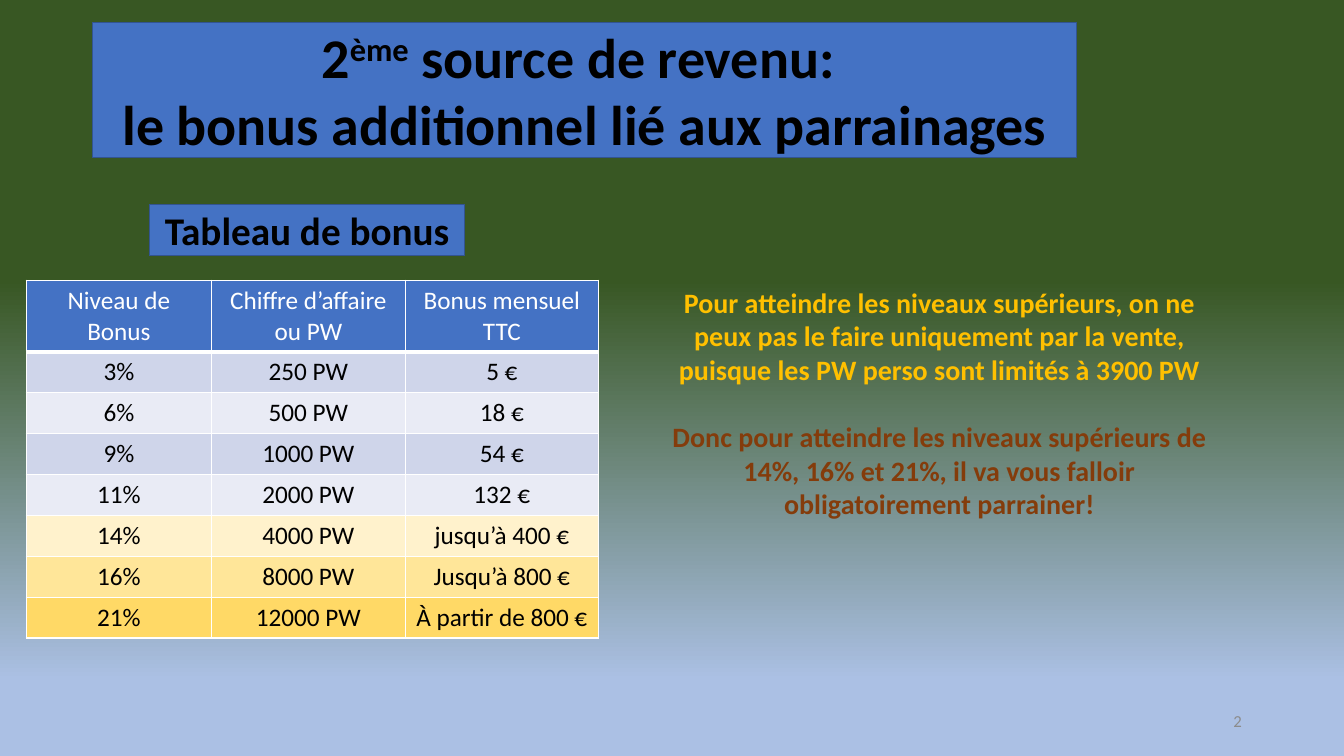
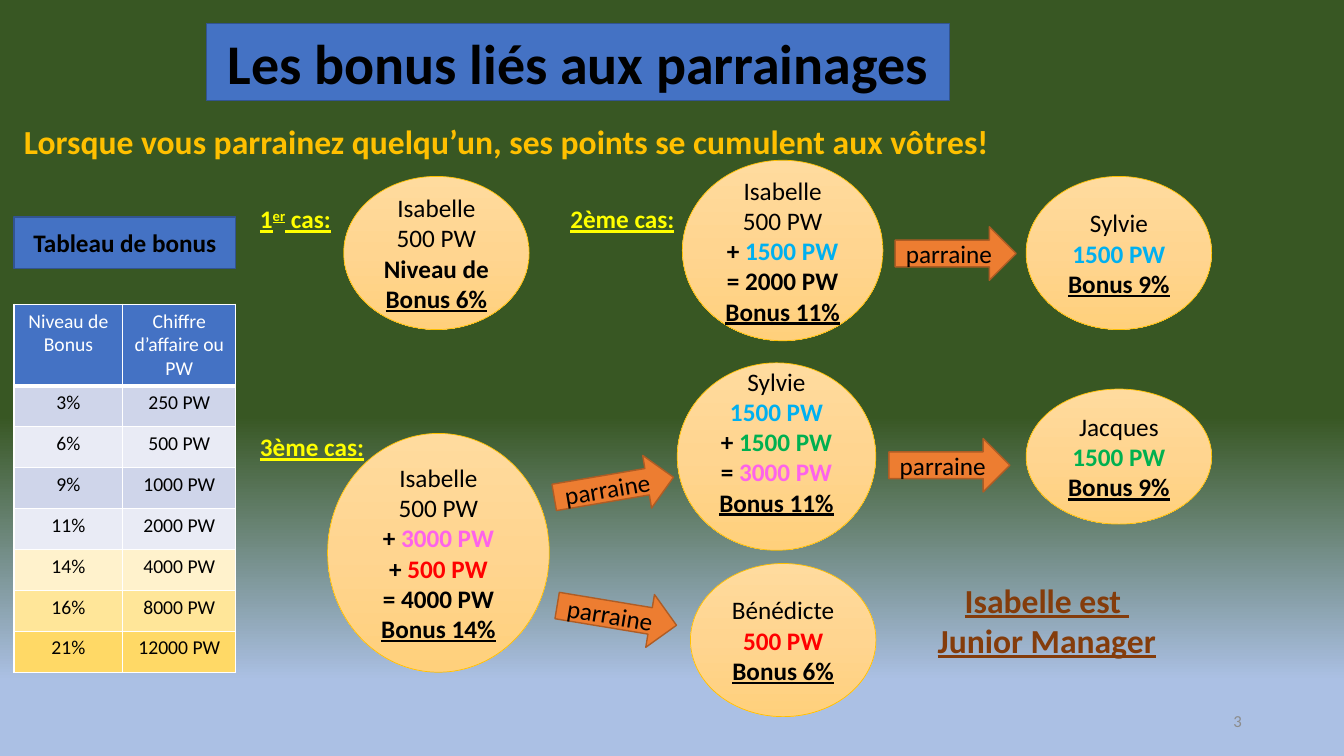
import pptx
import pptx.dml.color
import pptx.enum.shapes
import pptx.enum.text
import pptx.oxml.ns
import pptx.util
from lxml import etree

Pt = pptx.util.Pt
qn = pptx.oxml.ns.qn
ALIGN = pptx.enum.text.PP_ALIGN
MIDDLE = pptx.enum.text.MSO_ANCHOR.MIDDLE
FIT = pptx.enum.text.MSO_AUTO_SIZE
SHAPE = pptx.enum.shapes.MSO_SHAPE

FONT = "Calibri"
BLACK, WHITE, GREY = "000000", "FFFFFF", "8C8C8C"
BLUE, NAVY = "4472C4", "325491"
GOLD, BROWN, YELLOW = "FFC000", "843C0B", "FFFF00"
ORANGE, RUST = "ED7D31", "AF5C24"
CYAN, GREEN, PINK, RED = "00B0F0", "00B050", "FD63EB", "FF0000"
GLOW = [(0, "FFDB9E"), (50, "FFD590"), (100, "FFD07C")]
SKY = [(90, "ABC0E4"), (100, "ABC0E4"), (100, "C7D5ED")]
FOREST = "385723"

HEADS = ["Niveau de Bonus", "Chiffre d’affaire ou PW", "Bonus mensuel TTC"]
LEVELS = [
    ("CFD5EA", "3%", "250 PW", "5 €"),
    ("E9EBF5", "6%", "500 PW", "18 €"),
    ("CFD5EA", "9%", "1000 PW", "54 €"),
    ("E9EBF5", "11%", "2000 PW", "132 €"),
    ("FFF2CC", "14%", "4000 PW", "jusqu’à 400 €"),
    ("FFE699", "16%", "8000 PW", "Jusqu’à 800 €"),
    ("FFD966", "21%", "12000 PW", "À partir de 800 €"),
]


def rgb(code):
    return pptx.dml.color.RGBColor.from_string(code)


def paint(item, fill, line, width):
    if fill:
        item.fill.solid()
        item.fill.fore_color.rgb = rgb(fill)
    item.line.color.rgb = rgb(line)
    item.line.width = Pt(width)


def blend(fill, root, stops):
    fill.gradient()
    fill.gradient_angle = 270
    chain = root.find(".//" + qn("a:gsLst"))
    for old in list(chain):
        chain.remove(old)
    for pos, code in stops:
        stop = etree.SubElement(chain, qn("a:gs"), pos=str(pos * 1000))
        etree.SubElement(stop, qn("a:srgbClr"), val=code)


def style(font, color, marks):
    font.color.rgb = rgb(color)
    font.bold = "b" in marks
    font.underline = "u" in marks
    if "^" in marks:
        font._element.set("baseline", "30000")


def write(frame, size, lines, align=ALIGN.CENTER, gap=0):
    for row, parts in enumerate(lines):
        para = frame.paragraphs[0] if row == 0 else frame.add_paragraph()
        para.alignment = align
        para.font.name = FONT
        para.font.size = Pt(size)
        para.space_before = Pt(gap if row else 0)
        for text, color, marks in parts:
            run = para.add_run()
            run.text = text
            style(para.font if len(parts) == 1 else run.font, color, marks)


def shape(slide, kind, box):
    item = slide.shapes.add_shape(kind, *map(Pt, box))
    item.shadow.inherit = False
    item.text_frame.word_wrap = True
    item.text_frame.vertical_anchor = MIDDLE
    return item


def label(slide, box, size, lines, align=ALIGN.LEFT, wrap=False, gap=0):
    frame = slide.shapes.add_textbox(*map(Pt, box)).text_frame
    frame.word_wrap = wrap
    frame.auto_size = FIT.SHAPE_TO_FIT_TEXT
    write(frame, size, lines, align, gap)
    return frame


def page(deck, number, start, box, lines):
    slide = deck.slides.add_slide(deck.slide_layouts[5])
    blend(slide.background.fill, slide.element, [(start, FOREST)] + SKY)
    title = slide.shapes.title
    title.left, title.top, title.width, title.height = map(Pt, box)
    paint(title, BLUE, NAVY, 1)
    frame = title.text_frame
    frame.word_wrap = True
    frame.auto_size = FIT.NONE
    frame.vertical_anchor = MIDDLE
    write(frame, 40, lines)
    foot = label(slide, (678.2, 500.4, 216, 28.8), 12,
                 [[(str(number), GREY, "")]], ALIGN.RIGHT, True)
    foot.auto_size = FIT.NONE
    foot.vertical_anchor = MIDDLE
    return slide


def badge(slide, box, size):
    item = shape(slide, SHAPE.RECTANGLE, box)
    paint(item, BLUE, NAVY, 1)
    write(item.text_frame, size, [[("Tableau de bonus", BLACK, "b")]])


def edge(cell, base):
    props = cell._tc.get_or_add_tcPr()
    for side, width in (("L", 1), ("R", 1), ("T", 1), ("B", base)):
        line = etree.SubElement(props, qn("a:ln" + side), w=str(Pt(width)))
        fill = etree.SubElement(line, qn("a:solidFill"))
        etree.SubElement(fill, qn("a:srgbClr"), val=WHITE)


def grid(slide, left, top, widths, head, size):
    rows = [(BLUE, *HEADS)] + LEVELS
    high = 29.2
    frame = slide.shapes.add_table(
        len(rows), len(widths), Pt(left), Pt(top),
        Pt(sum(widths)), Pt(head + high * len(LEVELS)))
    table = frame.table
    table.first_row = table.horz_banding = False
    for col, width in enumerate(widths):
        table.columns[col].width = Pt(width)
    for row, (tint, *texts) in enumerate(rows):
        table.rows[row].height = Pt(high if row else head)
        for col in range(len(widths)):
            cell = table.cell(row, col)
            edge(cell, 1 if row else 3)
            cell.fill.solid()
            cell.fill.fore_color.rgb = rgb(tint)
            ink = BLACK if row else WHITE
            write(cell.text_frame, size, [[(texts[col], ink, "")]])


def bubble(slide, box, name, *lines):
    item = shape(slide, SHAPE.OVAL, box)
    blend(item.fill, item.element, GLOW)
    paint(item, None, GOLD, 0.5)
    write(item.text_frame, 18, [[(name, BLACK, "")], *lines])
    return item


def arrow(slide, left, top, turn=0):
    item = shape(slide, SHAPE.RIGHT_ARROW, (left, top, 86.4, 38.2))
    paint(item, ORANGE, RUST, 1)
    item.rotation = turn
    frame = item.text_frame
    frame.margin_left = frame.margin_right = Pt(4)
    write(frame, 18, [[("parraine", BLACK, "")]])


def plain(text):
    return [(text, BLACK, "")]


def bold(text, color=BLACK):
    return [(text, color, "b")]


def plus(text, color, sign="+ "):
    return bold(sign) + bold(text, color)


def bonus(rate):
    return [("Bonus " + rate, BLACK, "bu")]


def levels(deck):
    slide = page(deck, 2, 37, (66, 16, 703, 96.5), [
        [("2", BLACK, "b"), ("ème", BLACK, "b^"),
         (" source de revenu: ", BLACK, "b")],
        bold("le bonus additionnel lié aux parrainages")])
    grid(slide, 18.7, 200.2, [132.5, 138.2, 138.2], 51, 18)
    badge(slide, (106.6, 146, 225.4, 36.7), 28)
    label(slide, (468, 200.2, 406, 177), 20, [
        bold("Pour atteindre les niveaux supérieurs, on ne peux pas le faire "
             "uniquement par la vente, puisque les PW perso sont limités à "
             "3900 PW", GOLD),
        bold("Donc pour atteindre les niveaux supérieurs de 14%, 16% et 21%, "
             "il va vous falloir obligatoirement parrainer!", BROWN),
    ], ALIGN.CENTER, True, 24)


def cases(deck):
    slide = page(deck, 3, 55, (147.6, 16.6, 530.6, 55.4),
                 [bold("Les bonus liés aux parrainages")])
    grid(slide, 10, 217.4, [77.8, 80.6], 58, 14)
    badge(slide, (10, 155, 158.4, 36.7), 18)
    label(slide, (10, 82.8, 711.4, 36), 24, [
        bold("Lorsque vous parrainez quelqu’un, ses points se cumulent "
             "aux vôtres!", GOLD)])
    first = [("1", YELLOW, "bu"), ("er", YELLOW, "bu^"),
             (" cas:", YELLOW, "bu")]
    for left, top, width, parts in (
            (178.6, 141.8, 67, first),
            (400.3, 141.8, 89.3, [("2ème cas:", YELLOW, "bu")]),
            (178.6, 304.6, 89.3, [("3ème cas:", YELLOW, "bu")])):
        label(slide, (left, top, width, 28.8), 18, [parts])

    small = (132.5, 109.4)
    bubble(slide, (245.5, 126, *small), "Isabelle", plain("500 PW"),
           bold("Niveau de ") + bonus("6%"))
    bubble(slide, (487.4, 114.5, 143.3, 128.9), "Isabelle", plain("500 PW"),
           plus("1500 PW", CYAN), bold("= 2000 PW"), bonus("11%"))
    bubble(slide, (733, 126, *small), "Sylvie",
           bold("1500 PW", CYAN), bonus("9%"))
    bubble(slide, (234, 309.6, 158.4, 170.6), "Isabelle", plain("500 PW"),
           plus("3000 PW", PINK), plus("500 PW", RED),
           bold("= 4000 PW"), bonus("14%"))
    raised = bubble(slide, (483.8, 259.2, 141.8, 133.9), "Sylvie",
                    bold("1500 PW", CYAN), plus("1500 PW", GREEN),
                    plus("3000 PW", PINK, "= "), bonus("11%"))
    raised.text_frame.margin_bottom = Pt(25)
    bubble(slide, (493.2, 402.5, *small), "Bénédicte",
           bold("500 PW", RED), bonus("6%"))
    bubble(slide, (733, 277.9, 132.5, 96.5), "Jacques",
           bold("1500 PW", GREEN), bonus("9%"))

    for spot in ((639.4, 162), (395.3, 329, -9.6),
                 (397.4, 420.5, 9.4), (635, 313.2)):
        arrow(slide, *spot)
    label(slide, (661.7, 410.4, 172, 65.5), 24, [
        [("Isabelle est ", BROWN, "bu")],
        [("Junior Manager", BROWN, "bu")]], ALIGN.CENTER)


def main():
    deck = pptx.Presentation()
    deck.slide_width, deck.slide_height = Pt(960), Pt(540)
    levels(deck)
    cases(deck)
    deck.save("out.pptx")


if __name__ == "__main__":
    main()
